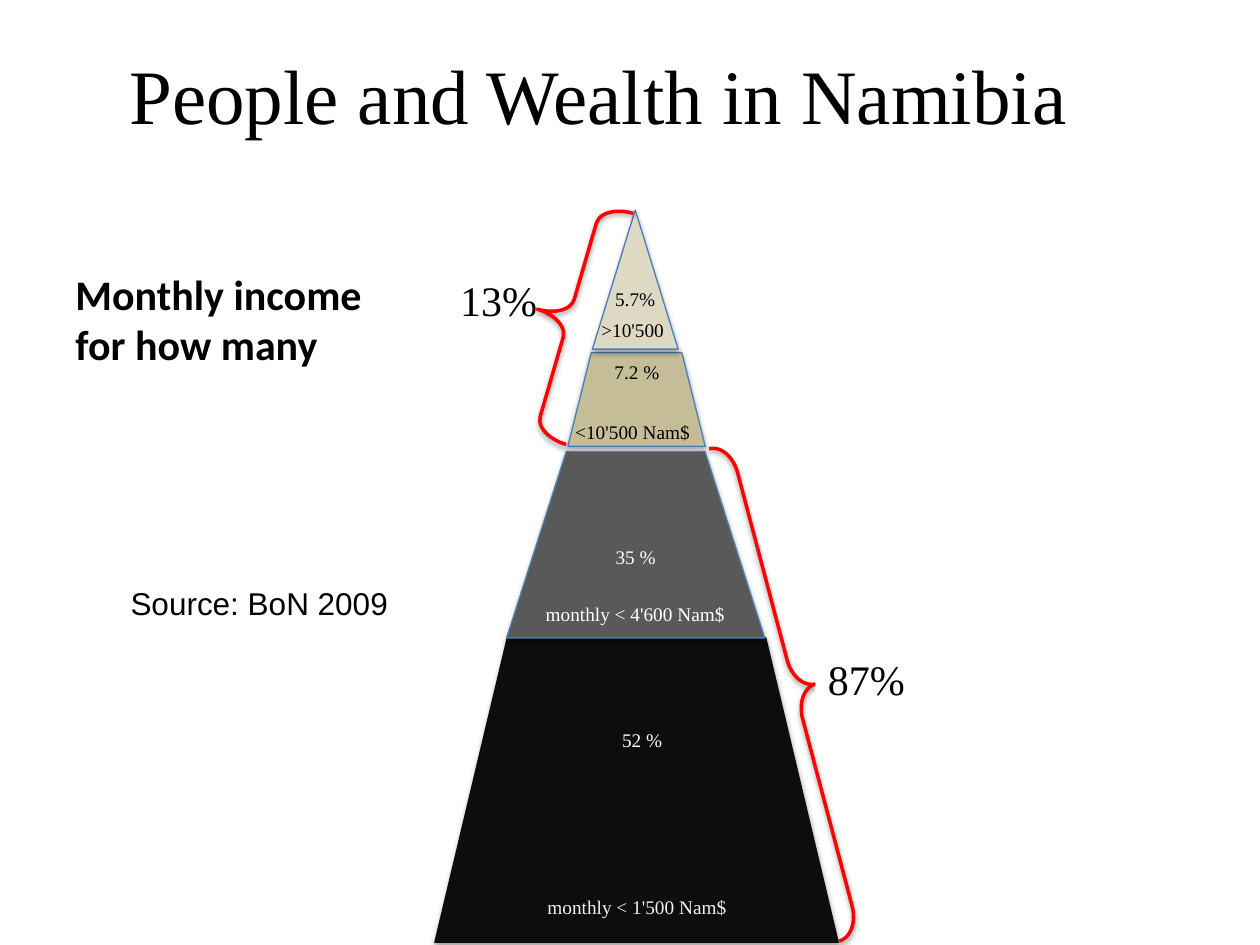
from dataclasses import dataclass

import lxml.etree
import pptx
import pptx.dml.color
import pptx.enum.shapes
import pptx.enum.text
import pptx.oxml.ns
import pptx.util

Pt = pptx.util.Pt
SHAPE = pptx.enum.shapes.MSO_SHAPE
ALIGN = pptx.enum.text.PP_ALIGN
ANCHOR = pptx.enum.text.MSO_ANCHOR


@dataclass(frozen=True)
class Theme:
    serif: str = "Times New Roman"
    sans: str = "Arial"
    heading: str = "Calibri"
    title_size: int = 44
    share_size: int = 24
    source_size: int = 18
    label_size: int = 11
    ink: str = "000000"
    white: str = "FFFFFF"
    pale: str = "F2F2F2"
    outline: str = "4B7EBC"
    brace: str = "FF0000"
    top: str = "DDD9C3"
    upper: str = "C4BD97"
    lower: str = "595959"
    base: str = "0D0D0D"


THEME = Theme()
TIGHT = (2.9, 2.9)
ROOMY = (7.2, 3.6)

# box, shape, adjustment, fill, outline
TIERS = [
    ((324.5, 201.5, 78.5, 53.5), SHAPE.TRAPEZOID, 0.25, THEME.upper, THEME.outline),
    ((248.5, 364.5, 230.5, 174), SHAPE.TRAPEZOID, 0.238, THEME.base, THEME.base),
    ((289.5, 258, 147.5, 106.5), SHAPE.TRAPEZOID, 0.32, THEME.lower, THEME.outline),
    ((338.5, 120, 49, 79.5), SHAPE.ISOSCELES_TRIANGLE, 0.5, THEME.top, THEME.outline),
]

# text, box, colour
TIER_LABELS = [
    ("5.7%", (337, 159, 52, 23), THEME.ink),
    (">10'500", (331, 177, 61, 23), THEME.ink),
    ("7.2 %", (342, 201.5, 44, 21.5), THEME.ink),
    ("<10'500 Nam$", (279.5, 238, 164, 17.5), THEME.ink),
    ("35 %", (312.5, 306, 101.5, 24), THEME.white),
    ("monthly < 4'600 Nam$", (289, 340, 148, 22), THEME.white),
    ("52 %", (260, 411, 214, 23), THEME.white),
    ("monthly < 1'500 Nam$", (282, 506, 164, 24), THEME.pale),
]


def rgb(colour):
    return pptx.dml.color.RGBColor.from_string(colour)


def add_shadow(shape, opacity, distance):
    """Cast a soft black shadow straight down."""
    qn = pptx.oxml.ns.qn
    shape.shadow.inherit = False
    effects = shape._element.spPr.find(qn("a:effectLst"))
    outer = lxml.etree.SubElement(
        effects, qn("a:outerShdw"), blurRad=str(Pt(3.1)), dist=str(Pt(distance)),
        dir="5400000", rotWithShape="0")
    black = lxml.etree.SubElement(outer, qn("a:srgbClr"), val="000000")
    lxml.etree.SubElement(black, qn("a:alpha"), val=str(opacity * 1000))


def add_tier(slide, box, kind, adjustment, fill, outline):
    tier = slide.shapes.add_shape(kind, *map(Pt, box))
    tier.adjustments[0] = adjustment
    tier.fill.solid()
    tier.fill.fore_color.rgb = rgb(fill)
    tier.line.color.rgb = rgb(outline)
    tier.line.width = Pt(0.75)
    add_shadow(tier, 35, 1.8)


def add_brace(slide, kind, box, rotation, curl, tip):
    brace = slide.shapes.add_shape(kind, *map(Pt, box))
    brace.rotation = rotation
    brace.adjustments[0] = curl
    brace.adjustments[1] = tip
    brace.fill.background()
    brace.line.color.rgb = rgb(THEME.brace)
    brace.line.width = Pt(2)
    add_shadow(brace, 38, 1.6)


def add_text(slide, text, box, size, font=THEME.serif, colour=THEME.ink,
             align=ALIGN.LEFT, anchor=ANCHOR.TOP, insets=ROOMY, bold=False):
    textbox = slide.shapes.add_textbox(*map(Pt, box))
    frame = textbox.text_frame
    frame.word_wrap = True
    frame.vertical_anchor = anchor
    frame.margin_left = frame.margin_right = Pt(insets[0])
    frame.margin_top = frame.margin_bottom = Pt(insets[1])
    paragraph = frame.paragraphs[0]
    paragraph.text = text
    paragraph.alignment = align
    for run in paragraph.runs:
        run.font.name = font
        run.font.size = Pt(size)
        run.font.bold = bold
        run.font.color.rgb = rgb(colour)
    return textbox


def main():
    deck = pptx.Presentation()
    deck.slide_width, deck.slide_height = Pt(720), Pt(540)
    slide = deck.slides.add_slide(deck.slide_layouts[6])

    add_text(slide, "People and Wealth in Namibia", (18, 15, 648, 77),
             THEME.title_size, align=ALIGN.CENTER, anchor=ANCHOR.MIDDLE)

    for tier in TIERS:
        add_tier(slide, *tier)
    for label, box, colour in TIER_LABELS:
        add_text(slide, label, box, THEME.label_size, colour=colour,
                 align=ALIGN.CENTER, anchor=ANCHOR.MIDDLE, insets=TIGHT)

    add_brace(slide, SHAPE.RIGHT_BRACE, (442, 248.5, 24.5, 291), -14.8, 0.712, 0.5)
    poor_share = add_text(slide, "87%", (466, 370, 63.5, 39.5), THEME.share_size)
    poor_share.fill.solid()
    poor_share.fill.fore_color.rgb = rgb(THEME.white)
    add_brace(slide, SHAPE.LEFT_BRACE, (306, 114, 37.5, 137.5), 16.2, 0.299, 0.494)
    add_text(slide, "13%", (260, 154, 60, 29.5), THEME.share_size, insets=TIGHT)

    add_text(slide, "Monthly income \vfor how many", (36, 111.5, 342, 103),
             THEME.share_size, font=THEME.heading, anchor=ANCHOR.BOTTOM, bold=True)
    add_text(slide, "Source: BoN 2009", (67.5, 330, 171, 29),
             THEME.source_size, font=THEME.sans)

    deck.save("out.pptx")


if __name__ == "__main__":
    main()
